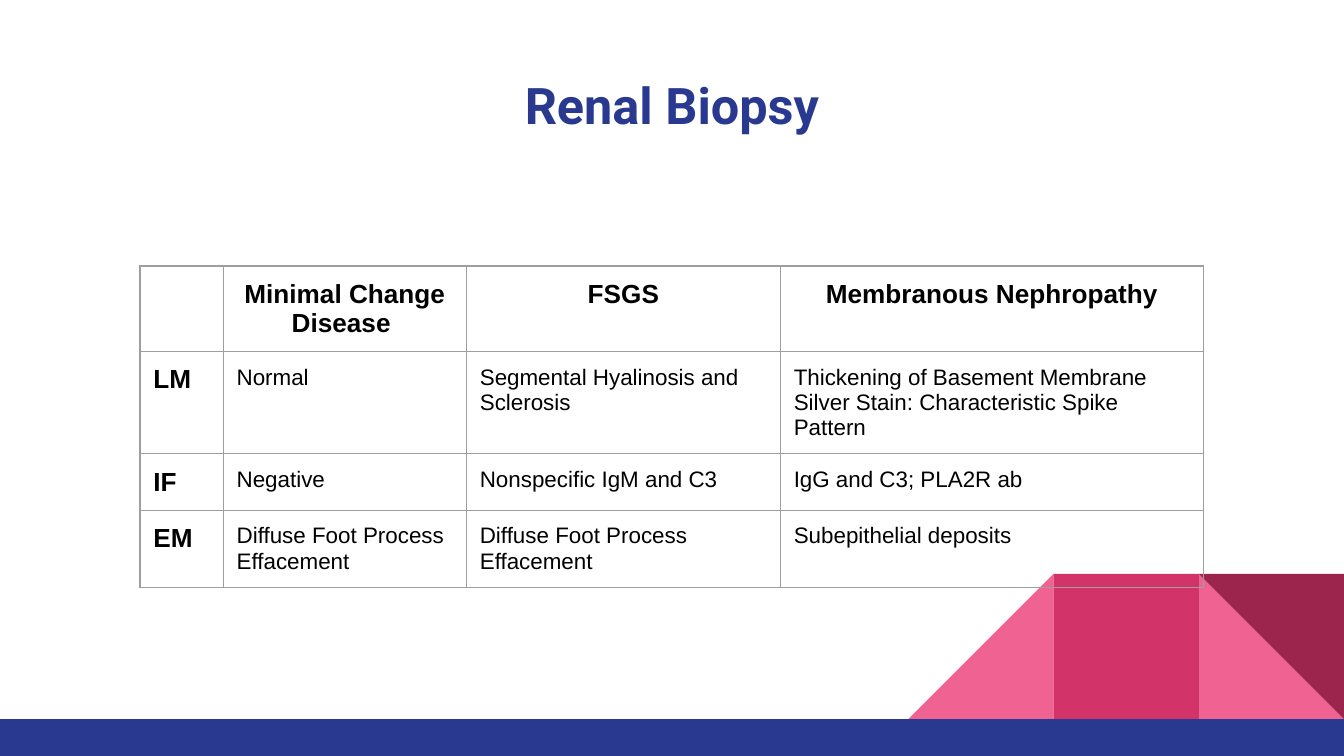
"""Build the renal biopsy comparison slide."""
from dataclasses import dataclass

from lxml import etree
from pptx import Presentation
from pptx.dml.color import RGBColor
from pptx.enum import shapes, text
from pptx.oxml import ns
from pptx.util import Pt


@dataclass(frozen=True)
class Theme:
    navy: str = "2A3990"
    pink: str = "F06292"
    rose: str = "D23369"
    wine: str = "9C254D"
    ink: str = "000000"
    border: str = "9E9E9E"
    title_font: str = "Roboto"
    body_font: str = "Arial"
    title_size: float = 27
    label_size: float = 14
    body_size: float = 12
    border_width: float = 0.75
    inset: float = 7.2


@dataclass(frozen=True)
class Block:
    kind: shapes.MSO_SHAPE
    left: float
    top: float
    width: float
    height: float
    color: str
    rotation: float = 0
    mirrored: bool = False


THEME = Theme()
WIDTH, HEIGHT = 720, 405
TILE = 77.8
STRIP_TOP = 385.2
TILE_TOP = STRIP_TOP - TILE
TILE_LEFTS = [WIDTH - TILE * count for count in (3, 2, 1)]
TRIANGLE = shapes.MSO_SHAPE.RIGHT_TRIANGLE
RECTANGLE = shapes.MSO_SHAPE.RECTANGLE
BLOCKS = [
    Block(TRIANGLE, TILE_LEFTS[2], TILE_TOP, TILE, TILE, THEME.pink),
    Block(TRIANGLE, TILE_LEFTS[0], TILE_TOP, TILE, TILE, THEME.pink, mirrored=True),
    Block(RECTANGLE, TILE_LEFTS[1], TILE_TOP, TILE, TILE, THEME.rose),
    Block(TRIANGLE, TILE_LEFTS[2], TILE_TOP, TILE, TILE, THEME.wine, rotation=180),
    Block(RECTANGLE, 0, STRIP_TOP, WIDTH, HEIGHT - STRIP_TOP, THEME.navy),
]

TABLE_LEFT, TABLE_TOP, ROW_HEIGHT = 75, 142.5, 30
COLUMN_WIDTHS = [44.6, 130.3, 168.2, 226.6]
FINDINGS = [
    ["", "Minimal Change Disease ", "FSGS", "Membranous Nephropathy"],
    ["LM", "Normal", "Segmental Hyalinosis and Sclerosis",
     "Thickening of Basement Membrane\nSilver Stain: Characteristic Spike Pattern"],
    ["IF", "Negative", "Nonspecific IgM and C3", "IgG and C3; PLA2R ab"],
    ["EM", "Diffuse Foot Process Effacement", "Diffuse Foot Process Effacement",
     "Subepithelial deposits"],
]


def style_paragraph(paragraph, font_name: str, size: float, color: str,
                    bold: bool, centered: bool) -> None:
    """Set the font and alignment of one paragraph."""
    font = paragraph.font
    font.name, font.size, font.bold = font_name, Pt(size), bold
    font.color.rgb = RGBColor.from_string(color)
    paragraph.alignment = text.PP_ALIGN.CENTER if centered else text.PP_ALIGN.LEFT


def add_block(slide, block: Block) -> None:
    """Draw one flat decorative shape."""
    shape = slide.shapes.add_shape(
        block.kind, Pt(block.left), Pt(block.top), Pt(block.width), Pt(block.height))
    shape.shadow.inherit = False
    shape.fill.solid()
    shape.fill.fore_color.rgb = RGBColor.from_string(block.color)
    shape.line.fill.background()
    shape.rotation = block.rotation
    if block.mirrored:
        shape.element.spPr.find(ns.qn("a:xfrm")).set("flipH", "1")


def format_title(slide, wording: str) -> None:
    """Place and style the slide title."""
    title = slide.shapes.title
    title.left, title.top, title.width, title.height = Pt(24.5), Pt(32.4), Pt(671), Pt(47.5)
    frame = title.text_frame
    frame.text = wording
    frame.auto_size = text.MSO_AUTO_SIZE.NONE
    frame.vertical_anchor = text.MSO_ANCHOR.TOP
    frame.margin_left = frame.margin_right = Pt(THEME.inset)
    frame.margin_top = frame.margin_bottom = Pt(THEME.inset)
    style_paragraph(frame.paragraphs[0], THEME.title_font, THEME.title_size,
                    THEME.navy, True, True)


def add_borders(cell) -> None:
    """Outline all four sides of a cell."""
    properties = cell._tc.get_or_add_tcPr()
    for position, side in enumerate(("lnL", "lnR", "lnT", "lnB")):
        line = etree.Element(ns.qn(f"a:{side}"), w=str(Pt(THEME.border_width)))
        fill = etree.SubElement(line, ns.qn("a:solidFill"))
        etree.SubElement(fill, ns.qn("a:srgbClr"), val=THEME.border)
        properties.insert(position, line)


def fill_cell(cell, wording: str, is_header: bool, is_label: bool) -> None:
    """Write and style one table cell."""
    cell.text = wording
    cell.margin_left = cell.margin_right = Pt(THEME.inset)
    cell.margin_top = cell.margin_bottom = Pt(THEME.inset)
    cell.fill.background()
    add_borders(cell)
    strong = is_header or is_label
    size = THEME.label_size if strong else THEME.body_size
    for paragraph in cell.text_frame.paragraphs:
        style_paragraph(paragraph, THEME.body_font, size, THEME.ink, strong, is_header)


def add_findings_table(slide) -> None:
    """Add the table of biopsy findings."""
    table = slide.shapes.add_table(
        len(FINDINGS), len(COLUMN_WIDTHS), Pt(TABLE_LEFT), Pt(TABLE_TOP),
        Pt(sum(COLUMN_WIDTHS)), Pt(ROW_HEIGHT * len(FINDINGS))).table
    table.first_row = table.horz_banding = False
    for column, width in zip(table.columns, COLUMN_WIDTHS):
        column.width = Pt(width)
    for row, findings in enumerate(FINDINGS):
        for column, wording in enumerate(findings):
            fill_cell(table.cell(row, column), wording, row == 0, column == 0)


def main() -> None:
    """Create and save the presentation."""
    presentation = Presentation()
    presentation.slide_width, presentation.slide_height = Pt(WIDTH), Pt(HEIGHT)
    slide = presentation.slides.add_slide(presentation.slide_layouts.get_by_name("Title Only"))
    for block in BLOCKS:
        add_block(slide, block)
    format_title(slide, "Renal Biopsy")
    add_findings_table(slide)
    presentation.save("out.pptx")


if __name__ == "__main__":
    main()
